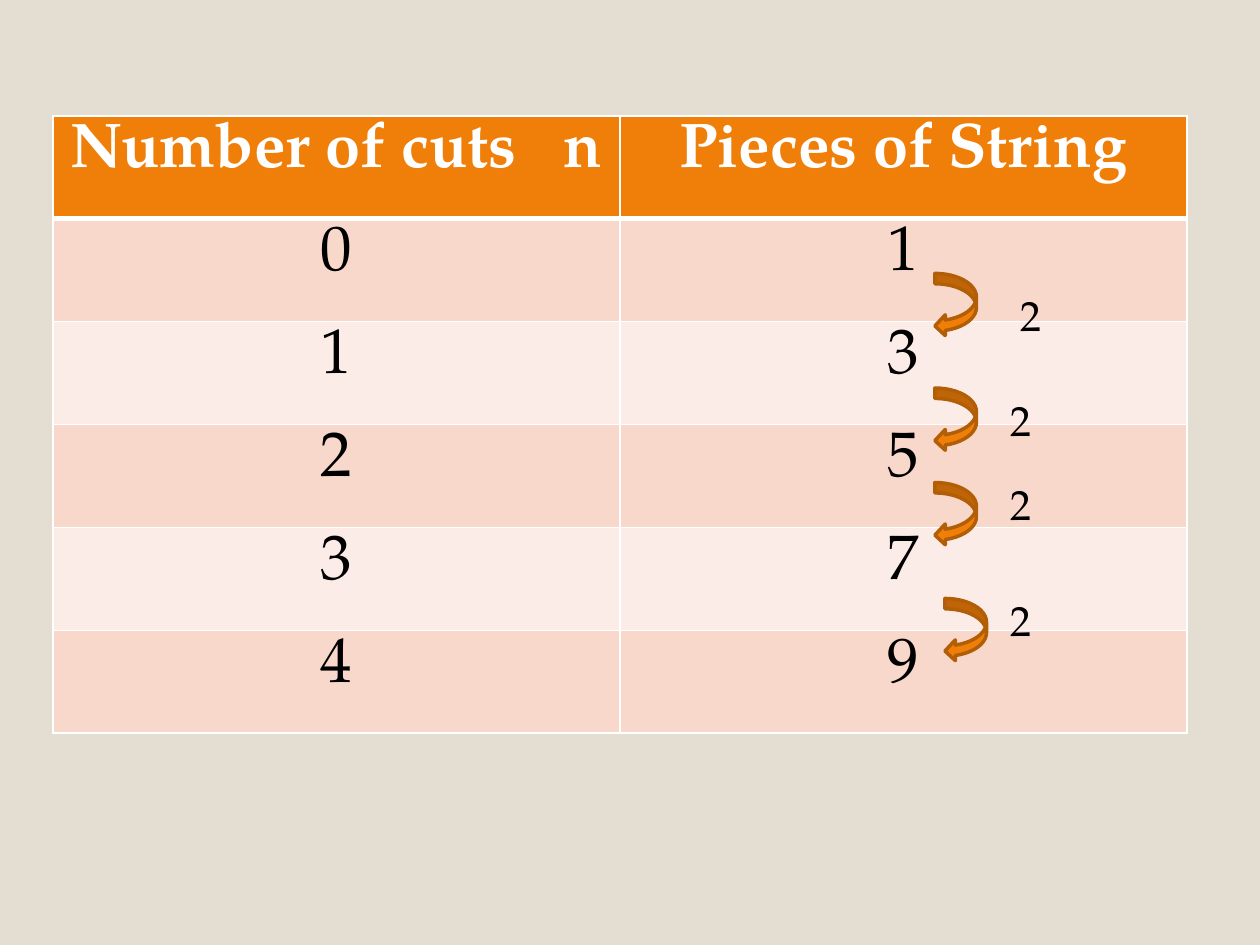
"""Build a slide tabulating string pieces against cuts, with the steps between rows."""
from dataclasses import dataclass

from lxml.etree import SubElement
from pptx import Presentation
from pptx.dml.color import RGBColor
from pptx.enum.shapes import MSO_SHAPE
from pptx.enum.text import MSO_AUTO_SIZE, PP_ALIGN
from pptx.oxml.ns import qn
from pptx.slide import Slide
from pptx.table import _Cell
from pptx.text.text import TextFrame
from pptx.util import Inches, Pt


@dataclass(frozen=True)
class Theme:
    background: str = "E3DED1"
    accent: str = "F07F09"
    accent_dark: str = "B25E07"
    bands: tuple[str, str] = ("F9D8CC", "FCECE7")
    white: str = "FFFFFF"
    black: str = "000000"
    font: str = "TeX Gyre Pagella"
    table_size: int = 36
    step_size: int = 24


@dataclass(frozen=True)
class Step:
    arrow_left: float
    arrow_top: float
    label_left: float
    label_top: float
    label: str = "2"


THEME = Theme()
HEADINGS = ("Number of cuts   n", "Pieces of String")
ROWS = [HEADINGS] + [(str(cuts), str(2 * cuts + 1)) for cuts in range(5)]
COLUMN_WIDTH = 4.5
ROW_HEIGHT = 4.9 / len(ROWS)
STEPS = (
    Step(7.42, 2.17, 8, 2.25),
    Step(7.42, 3.08, 7.92, 3.08),
    Step(7.42, 3.83, 7.92, 3.75),
    Step(7.5, 4.75, 7.92, 4.67),
)


def color(value: str) -> RGBColor:
    return RGBColor.from_string(value)


def write_text(frame: TextFrame, text: str, *, size: int, ink: str = THEME.black,
               bold: bool = False, align: PP_ALIGN = PP_ALIGN.LEFT) -> None:
    para = frame.paragraphs[0]
    para.alignment = align
    span = para.add_run()
    span.text = text
    span.font.name = THEME.font
    span.font.size = Pt(size)
    span.font.bold = bold
    span.font.color.rgb = color(ink)


def add_borders(cell: _Cell, *, top: int = 1, bottom: int = 1) -> None:
    properties = cell._tc.get_or_add_tcPr()
    for side, width in (("L", 1), ("R", 1), ("T", top), ("B", bottom)):
        line = SubElement(properties, qn(f"a:ln{side}"), w=str(Pt(width)))
        fill = SubElement(line, qn("a:solidFill"))
        SubElement(fill, qn("a:srgbClr"), val=THEME.white)


def add_cuts_table(page: Slide) -> None:
    table = page.shapes.add_table(
        len(ROWS), len(HEADINGS), Inches(0.42), Inches(0.92),
        Inches(COLUMN_WIDTH * len(HEADINGS)), Inches(ROW_HEIGHT * len(ROWS))).table
    for index, values in enumerate(ROWS):
        header = index == 0
        for column, value in enumerate(values):
            cell = table.cell(index, column)
            add_borders(cell, top=3 if index == 1 else 1, bottom=3 if header else 1)
            cell.fill.solid()
            cell.fill.fore_color.rgb = color(
                THEME.accent if header else THEME.bands[(index - 1) % 2])
            write_text(cell.text_frame, value, size=THEME.table_size, bold=header,
                       ink=THEME.white if header else THEME.black,
                       align=PP_ALIGN.CENTER)


def add_arrow(page: Slide, step: Step) -> None:
    arrow = page.shapes.add_shape(
        MSO_SHAPE.CURVED_LEFT_ARROW, Inches(step.arrow_left), Inches(step.arrow_top),
        Inches(0.33), Inches(0.5))
    arrow.shadow.inherit = False
    arrow.fill.solid()
    arrow.fill.fore_color.rgb = color(THEME.accent)
    arrow.line.color.rgb = color(THEME.accent_dark)
    arrow.line.width = Pt(2)


def add_label(page: Slide, step: Step) -> None:
    box = page.shapes.add_textbox(
        Inches(step.label_left), Inches(step.label_top), Inches(0.5), Inches(0.5))
    box.text_frame.word_wrap = True
    box.text_frame.auto_size = MSO_AUTO_SIZE.SHAPE_TO_FIT_TEXT
    write_text(box.text_frame, step.label, size=THEME.step_size)


def main() -> None:
    deck = Presentation()
    deck.slide_width, deck.slide_height = Inches(10), Inches(7.5)
    page = deck.slides.add_slide(deck.slide_layouts[6])
    page.background.fill.solid()
    page.background.fill.fore_color.rgb = color(THEME.background)
    add_cuts_table(page)
    for step in STEPS:
        add_arrow(page, step)
    for step in STEPS:
        add_label(page, step)
    deck.save("out.pptx")


if __name__ == "__main__":
    main()
